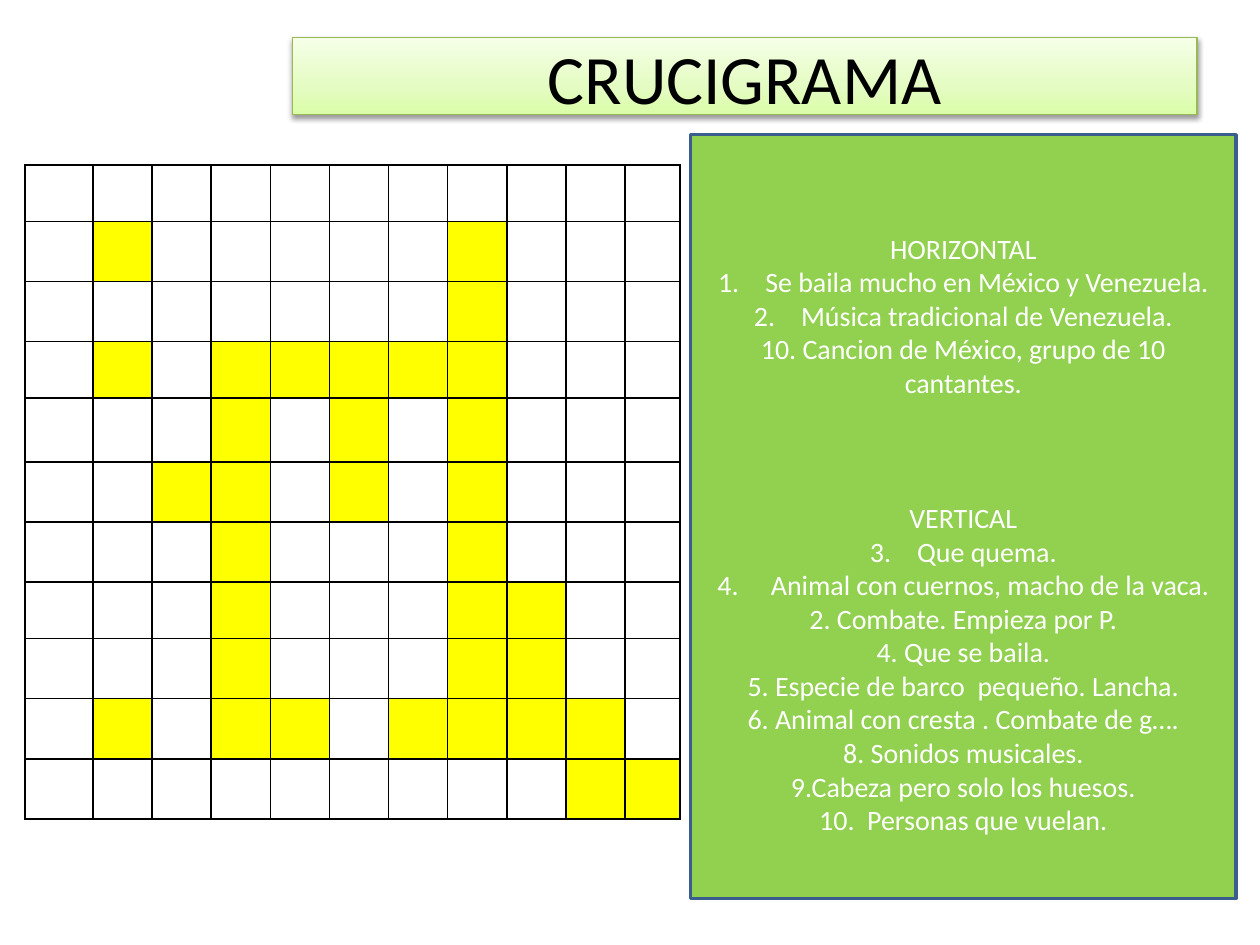
import pptx
import pptx.dml.color
import pptx.enum.shapes
import pptx.enum.text
import pptx.oxml.ns
import pptx.util
from lxml import etree

Pt = pptx.util.Pt
qn = pptx.oxml.ns.qn
RGBColor = pptx.dml.color.RGBColor
MIDDLE = pptx.enum.text.MSO_ANCHOR.MIDDLE

COLORS = {
    "black": "000000",
    "white": "FFFFFF",
    "yellow": "FFFF00",
    "panel": "92D050",
    "panel_line": "3A5F8C",
    "title_line": "98B955",
}
TITLE_GRADIENT = [(0, "DAFDA7"), (35, "E4FCC2"), (100, "F5FFE7")]


def write(paragraph, text, size, color, before=0, indent=0, number_from=None):
    """Fill a centred paragraph, optionally with a hanging indent and a number."""
    paragraph.alignment = pptx.enum.text.PP_ALIGN.CENTER
    paragraph.space_before = Pt(before)
    run = paragraph.add_run()
    run.text = text
    run.font.name = "Calibri"
    run.font.size = Pt(size)
    run.font.color.rgb = RGBColor.from_string(COLORS[color])
    properties = paragraph._p.get_or_add_pPr()
    if indent:
        properties.set("marL", str(Pt(indent)))
        properties.set("indent", str(-Pt(indent)))
    if number_from:
        etree.SubElement(properties, qn("a:buAutoNum"), type="arabicPeriod",
                         startAt=str(number_from))


def add_color(parent, color, alpha=None):
    """Append an RGB colour element, with opacity in percent if given."""
    element = etree.SubElement(parent, qn("a:srgbClr"), val=color)
    if alpha is not None:
        etree.SubElement(element, qn("a:alpha"), val=str(alpha * 1000))


presentation = pptx.Presentation()
presentation.slide_width = Pt(720)
presentation.slide_height = Pt(540)
slide = presentation.slides.add_slide(presentation.slide_layouts[5])

# Title with gradient and soft shadow
title = slide.shapes.title
title.left, title.top, title.width, title.height = Pt(167), Pt(21.6), Pt(517), Pt(44)
title.text_frame.auto_size = pptx.enum.text.MSO_AUTO_SIZE.NONE
title.text_frame.vertical_anchor = MIDDLE
write(title.text_frame.paragraphs[0], "CRUCIGRAMA", 39.6, "black")
title.fill.gradient()
title.fill.gradient_angle = 90
stops = title._element.spPr.find(qn("a:gradFill")).find(qn("a:gsLst"))
for stop in list(stops):
    stops.remove(stop)
for position, color in TITLE_GRADIENT:
    add_color(etree.SubElement(stops, qn("a:gs"), pos=str(position * 1000)), color)
title.line.color.rgb = RGBColor.from_string(COLORS["title_line"])
title.line.width = Pt(0.75)
title.shadow.inherit = False
shadow = etree.SubElement(
    title._element.spPr.find(qn("a:effectLst")), qn("a:outerShdw"),
    blurRad=str(Pt(3.1)), dist=str(Pt(1.6)), dir="5400000", rotWithShape="0")
add_color(shadow, COLORS["black"], alpha=38)

# Clue panel
panel = slide.shapes.add_shape(pptx.enum.shapes.MSO_SHAPE.RECTANGLE,
                               Pt(394.6), Pt(77), Pt(311.8), Pt(436.5))
panel.shadow.inherit = False
panel.fill.solid()
panel.fill.fore_color.rgb = RGBColor.from_string(COLORS["panel"])
panel.line.color.rgb = RGBColor.from_string(COLORS["panel_line"])
panel.line.width = Pt(2)
frame = panel.text_frame
frame.word_wrap = True
frame.vertical_anchor = MIDDLE
frame.margin_top = Pt(23)

clues = [
    ("HORIZONTAL", {}),
    ("Se baila mucho en México y Venezuela.", {"indent": 27, "number_from": 1}),
    ("Música tradicional de Venezuela.", {"indent": 27, "number_from": 1}),
    ("10. Cancion de México, grupo de 10 cantantes.", {}),
    ("VERTICAL", {"before": 58}),
    ("Que quema.", {"indent": 27, "number_from": 3}),
    (" Animal con cuernos, macho de la vaca.", {"indent": 27, "number_from": 3}),
    ("2. Combate. Empieza por P.", {"indent": 27}),
    ("4. Que se baila.", {"indent": 27}),
    ("5. Especie de barco  pequeño. Lancha.", {"indent": 27}),
    ("6. Animal con cresta . Combate de g….", {"indent": 27}),
    ("8. Sonidos musicales.", {"indent": 27}),
    ("9.Cabeza pero solo los huesos.", {"indent": 27}),
    ("10.  Personas que vuelan.", {"indent": 27}),
]
for index, (text, layout) in enumerate(clues):
    paragraph = frame.add_paragraph() if index else frame.paragraphs[0]
    write(paragraph, text, 16, "white", **layout)

# Crossword grid: # marks a yellow square
pattern = [
    "...........",
    ".#.....#...",
    ".......#...",
    ".#.#####...",
    "...#.#.#...",
    "..##.#.#...",
    "...#...#...",
    "...#...##..",
    "...#...##..",
    ".#.##.####.",
    ".........##",
]
column_widths = [38.9] + [33.8] * 9 + [31.5]
row_heights = [32.2, 34.4, 34.4, 32.2, 36.5, 34.4, 34.4, 32.2, 34.4, 34.4, 34.4]
table = slide.shapes.add_table(
    len(row_heights), len(column_widths), Pt(14.2), Pt(94.3),
    Pt(sum(column_widths)), Pt(sum(row_heights))).table
table.first_row = False
table.horz_banding = False
for column, width in zip(table.columns, column_widths):
    column.width = Pt(width)
for row, height in zip(table.rows, row_heights):
    row.height = Pt(height)

for row_index, marks in enumerate(pattern):
    for column_index, mark in enumerate(marks):
        cell = table.cell(row_index, column_index)
        properties = cell._tc.get_or_add_tcPr()
        for side in ("lnL", "lnR", "lnT", "lnB"):
            border = etree.SubElement(properties, qn("a:" + side), w=str(Pt(1)))
            add_color(etree.SubElement(border, qn("a:solidFill")), COLORS["black"])
        if row_index == 0 or column_index == 0:
            cell.fill.background()
        else:
            cell.fill.solid()
            color = "yellow" if mark == "#" else "white"
            cell.fill.fore_color.rgb = RGBColor.from_string(COLORS[color])

presentation.save("out.pptx")
